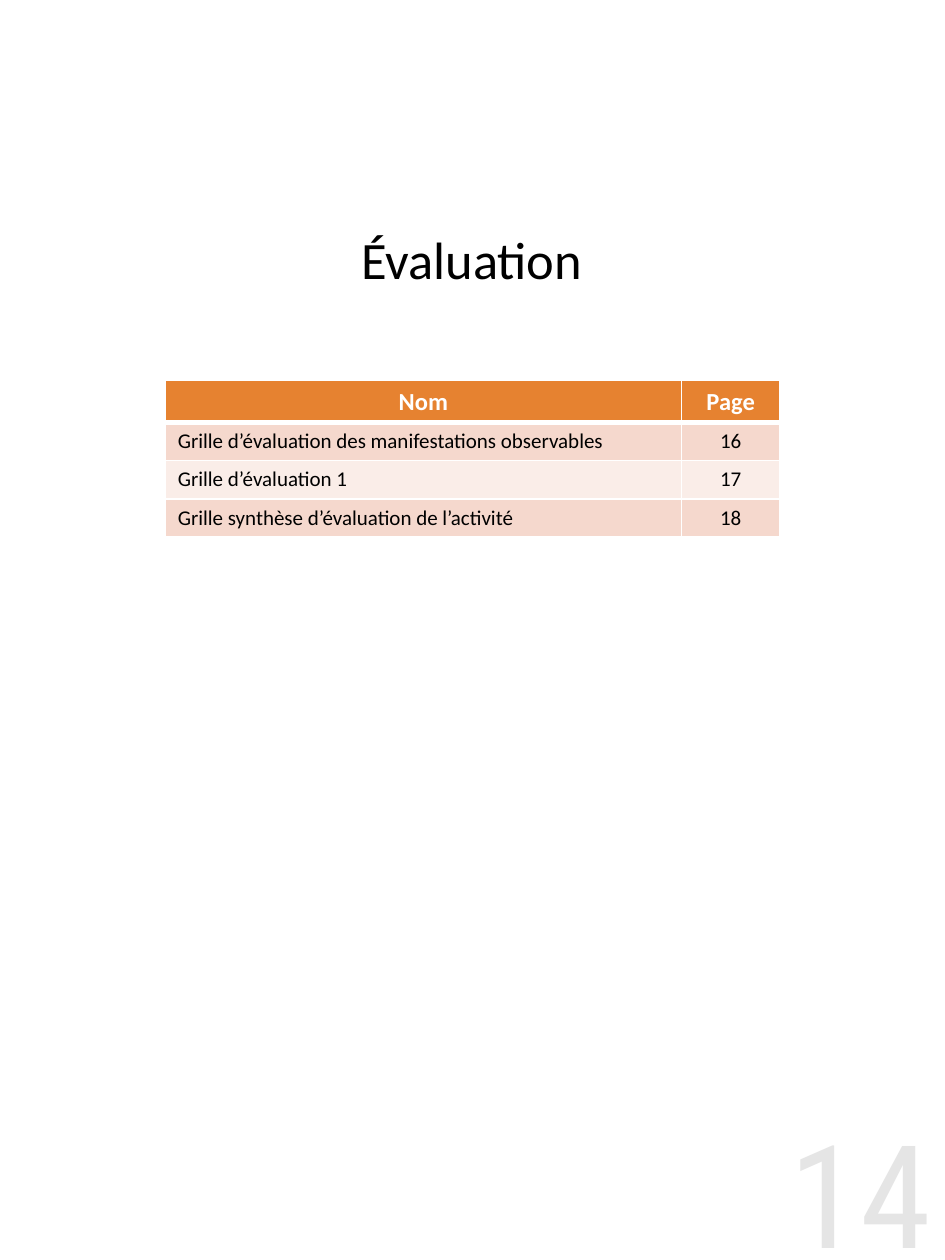
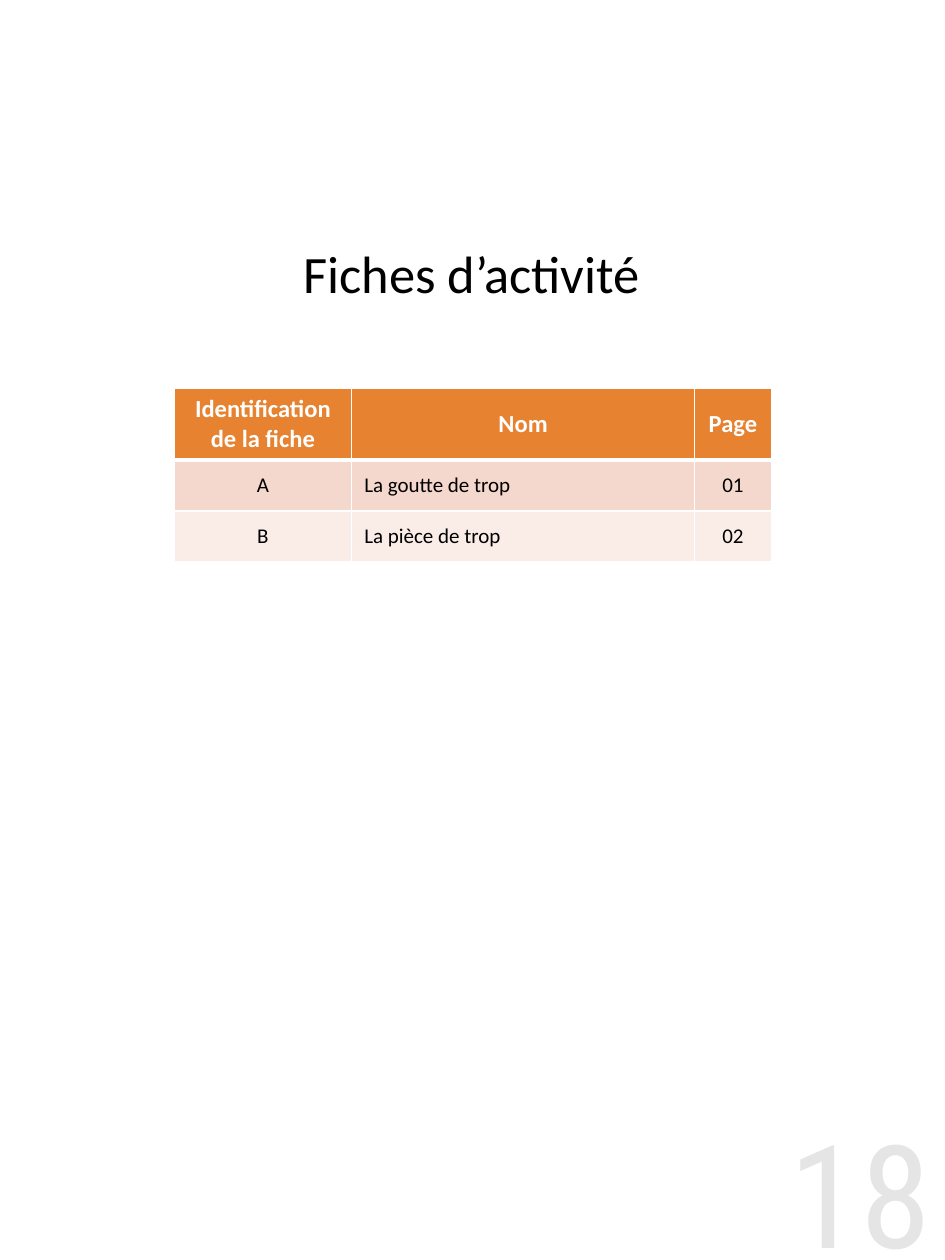
from lxml import etree
from pptx import Presentation
from pptx.dml.color import RGBColor
from pptx.enum.text import MSO_ANCHOR, PP_ALIGN
from pptx.oxml.ns import qn
from pptx.util import Cm, Pt

LEFT, CENTER, RIGHT = PP_ALIGN.LEFT, PP_ALIGN.CENTER, PP_ALIGN.RIGHT
TOP, MIDDLE = MSO_ANCHOR.TOP, MSO_ANCHOR.MIDDLE

BLACK = RGBColor(0x00, 0x00, 0x00)
WHITE = RGBColor(0xFF, 0xFF, 0xFF)
ORANGE = RGBColor(0xE6, 0x82, 0x30)
BANDS = (RGBColor(0xF5, 0xD8, 0xCD), RGBColor(0xFA, 0xED, 0xE8))
PALE_GREY = RGBColor(0xE5, 0xE5, 0xE5)

FONT = "Calibri"
NUMBER_FONT = "Roboto Condensed"


def write(tf, text, size=12, color=BLACK, bold=False, align=LEFT, font=FONT):
    p = tf.paragraphs[0]
    p.alignment = align
    r = p.add_run()
    r.text = text
    r.font.name = font
    r.font.size = Pt(size)
    r.font.bold = bold
    r.font.color.rgb = color


def add_text(s, text, left, top, width, height, anchor=MIDDLE, **fmt):
    tf = s.shapes.add_textbox(Cm(left), Cm(top), Cm(width), Cm(height)).text_frame
    tf.word_wrap = True
    tf.vertical_anchor = anchor
    tf.margin_left = tf.margin_right = tf.margin_top = tf.margin_bottom = 0
    write(tf, text, **fmt)


def add_title(s, text, top):
    add_text(s, text, 3.58, top, 11.86, 2.41, size=30, align=CENTER)


def add_page_number(s, number):
    add_text(s, number, 13.8, 22.28, 4.97, 3.1, anchor=TOP, size=82,
             color=PALE_GREY, align=RIGHT, font=NUMBER_FONT)


def set_borders(cell, **widths):
    tcPr = cell._tc.get_or_add_tcPr()
    for side in "LRTB":
        ln = etree.SubElement(tcPr, qn("a:ln" + side), w=str(Pt(widths.get(side, 1))))
        fill = etree.SubElement(ln, qn("a:solidFill"))
        etree.SubElement(fill, qn("a:srgbClr"), val=str(WHITE))


def add_index_table(s, rows, left, top, col_widths, header_height, row_height):
    heights = [header_height] + [row_height] * (len(rows) - 1)
    table = s.shapes.add_table(len(rows), len(col_widths), Cm(left), Cm(top),
                               Cm(sum(col_widths)), Cm(sum(heights))).table
    for col, width in zip(table.columns, col_widths):
        col.width = Cm(width)
    for i, (values, height) in enumerate(zip(rows, heights)):
        table.rows[i].height = Cm(height)
        for j, value in enumerate(values):
            cell = table.cell(i, j)
            cell.vertical_anchor = MIDDLE
            set_borders(cell, T=3 if i == 1 else 1, B=3 if i == 0 else 1)
            cell.fill.solid()
            if i == 0:
                cell.fill.fore_color.rgb = ORANGE
                write(cell.text_frame, value, size=14, color=WHITE, bold=True, align=CENTER)
            else:
                cell.fill.fore_color.rgb = BANDS[(i - 1) % 2]
                is_name = rows[0][j] == "Nom"
                write(cell.text_frame, value, align=LEFT if is_name else CENTER)


def main():
    prs = Presentation()
    prs.slide_width, prs.slide_height = Cm(19.05), Cm(25.4)
    blank = prs.slide_layouts[6]

    s = prs.slides.add_slide(blank)
    add_page_number(s, "14")
    add_title(s, "Évaluation", 4.01)
    add_index_table(s, [
        ("Nom", "Page"),
        ("Grille d’évaluation des manifestations observables", "16"),
        ("Grille d’évaluation 1", "17"),
        ("Grille synthèse d’évaluation de l’activité", "18"),
    ], 3.33, 7.67, (10.41, 1.98), 0.84, 0.77)

    s = prs.slides.add_slide(blank)
    add_page_number(s, "18")
    add_title(s, "Fiches d’activité", 4.29)
    add_index_table(s, [
        ("Identification de la fiche", "Nom", "Page"),
        ("A", "La goutte de trop", "01"),
        ("B", "La pièce de trop", "02"),
    ], 3.51, 7.82, (3.58, 6.91, 1.55), 1.45, 1.03)

    prs.save("out.pptx")


if __name__ == "__main__":
    main()
